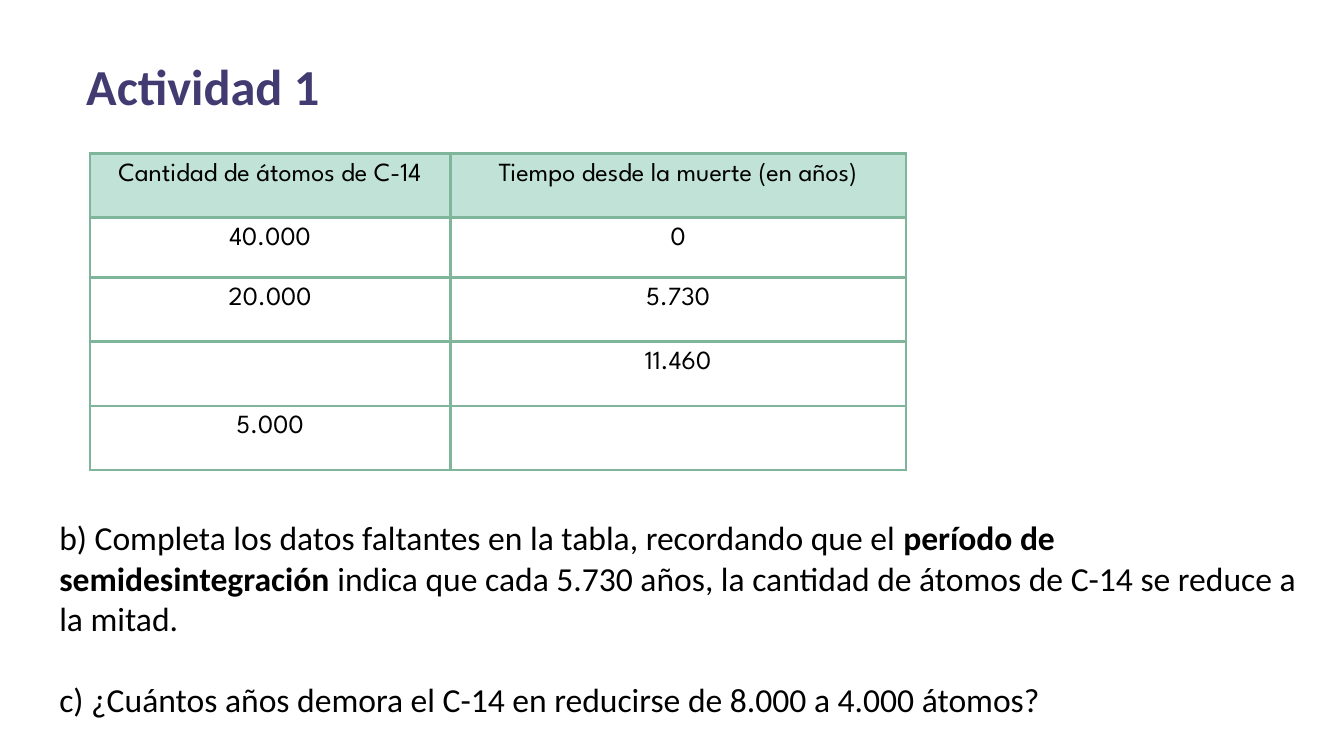
"""Build the slide "Actividad 1" with a carbon-14 decay table and two questions."""
from lxml.etree import SubElement
from pptx import Presentation
from pptx.dml.color import RGBColor
from pptx.enum.text import MSO_ANCHOR, MSO_AUTO_SIZE, PP_ALIGN
from pptx.oxml.ns import qn
from pptx.util import Cm, Pt


def add_run(p, text, size, color="000000", bold=False, font="Calibri"):
    r = p.add_run()
    r.text = text
    r.font.name, r.font.size, r.font.bold = font, Pt(size), bold
    r.font.color.rgb = RGBColor.from_string(color)


def place(sp, left, top, width, height):
    sp.left, sp.top, sp.width, sp.height = Cm(left), Cm(top), Cm(width), Cm(height)
    tf = sp.text_frame
    tf.word_wrap, tf.auto_size = True, MSO_AUTO_SIZE.NONE
    tf.vertical_anchor = MSO_ANCHOR.TOP
    tf.margin_left = tf.margin_right = Cm(0.18)
    tf.margin_top = tf.margin_bottom = Cm(0.1)
    return tf


prs = Presentation()
prs.slide_width, prs.slide_height = Cm(25.4), Cm(14.29)
s = prs.slides.add_slide(prs.slide_layouts[1])

tf = place(s.shapes.title, 1.45, 0.94, 14.73, 1.35)
p = tf.paragraphs[0]
p.alignment = PP_ALIGN.LEFT
add_run(p, "Actividad 1", 27, "423B71", True)

questions = [
    [("b) Completa los datos faltantes en la tabla, recordando que el ", False),
     ("período de semidesintegración", True),
     (" indica que cada 5.730 años, la cantidad de átomos de C-14 se reduce a la mitad.", False)],
    [("c) ¿Cuántos años demora el C-14 en reducirse de 8.000 a 4.000 átomos?", False)],
]
tf = place(s.placeholders[1], 0.94, 9.68, 23.88, 4.1)
for i, parts in enumerate(questions):
    p = tf.add_paragraph() if i else tf.paragraphs[0]
    pPr = p._p.get_or_add_pPr()
    pPr.set("marL", "0")
    pPr.set("indent", "0")
    SubElement(pPr, qn("a:buNone"))
    p.space_before = Pt(22 * i)
    for text, bold in parts:
        add_run(p, text, 18, bold=bold)

rows = [
    ("Cantidad de átomos de C-14", "Tiempo desde la muerte (en años)"),
    ("40.000", "0"),
    ("20.000", "5.730"),
    ("", "11.460"),
    ("5.000", ""),
]
heights = [1.21, 1.14, 1.21, 1.21, 1.21]
tbl = s.shapes.add_table(5, 2, Cm(1.7), Cm(2.9), Cm(15.42), Cm(5.98)).table
tbl.first_row = tbl.horz_banding = False
for col, width in zip(tbl.columns, (6.81, 8.61)):
    col.width = Cm(width)
for i, (values, height) in enumerate(zip(rows, heights)):
    tbl.rows[i].height = Cm(height)
    for j, text in enumerate(values):
        cell = tbl.cell(i, j)
        cell.margin_left = cell.margin_right = Cm(0.18)
        cell.margin_top = cell.margin_bottom = Cm(0.18)
        tcPr = cell._tc.get_or_add_tcPr()
        for side in ("lnL", "lnR", "lnT", "lnB"):
            ln = SubElement(tcPr, qn(f"a:{side}"), w=str(Pt(1.5)))
            SubElement(SubElement(ln, qn("a:solidFill")), qn("a:srgbClr"), val="7FB59B")
        if i == 0:
            cell.fill.solid()
            cell.fill.fore_color.rgb = RGBColor.from_string("C0E2D7")
        else:
            cell.fill.background()
        p = cell.text_frame.paragraphs[0]
        p.alignment = PP_ALIGN.CENTER
        if text:
            add_run(p, text, 14, font="League Spartan")

prs.save("out.pptx")
